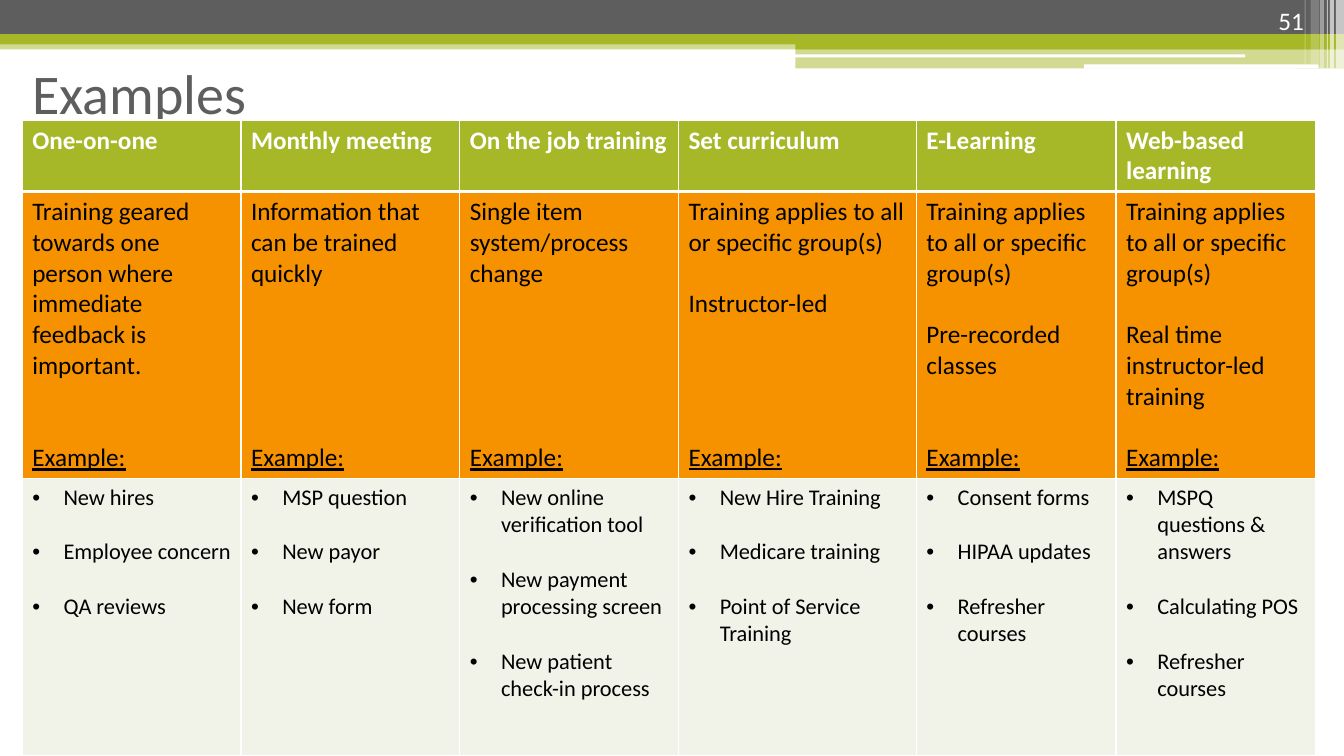
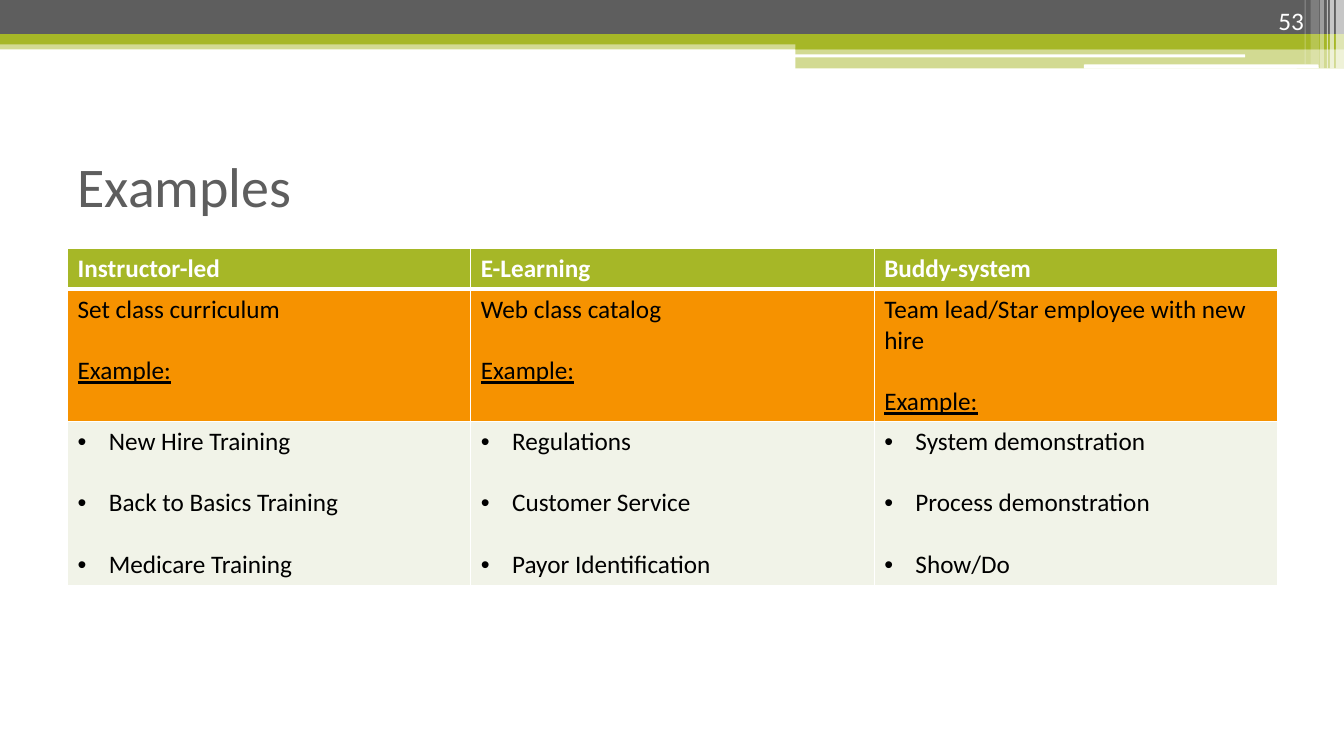
"""Build two slides of training examples, each with a banded header and a table."""
import pptx
import pptx.util
import pptx.dml.color
import pptx.enum.shapes
import pptx.enum.text
import pptx.oxml
import pptx.oxml.ns
from pptx.util import Inches

RGBColor = pptx.dml.color.RGBColor
WHITE = RGBColor(0xFF, 0xFF, 0xFF)
BLACK = RGBColor(0x00, 0x00, 0x00)
GRAY = RGBColor(0x5E, 0x5E, 0x5E)
GREEN = RGBColor(0xA6, 0xB7, 0x27)
ORANGE = RGBColor(0xF6, 0x92, 0x00)
PALE = RGBColor(0xF1, 0xF3, 0xE8)

FONT = "Calibri"
LINE_HEIGHT = 1.22
BULLET_INDENT = 0.31
WIDTH, HEIGHT = 13.33, 7.5
RECTANGLE = pptx.enum.shapes.MSO_SHAPE.RECTANGLE
ROUNDED = pptx.enum.shapes.MSO_SHAPE.ROUNDED_RECTANGLE
ANCHOR = pptx.enum.text.MSO_ANCHOR
ALIGN = pptx.enum.text.PP_ALIGN

BANDS = [
    (RECTANGLE, (0, 0.4, WIDTH, 0.09), GREEN, 50),
    (RECTANGLE, (0, 0, WIDTH, 0.34), GRAY, 100),
    (RECTANGLE, (0, 0.34, WIDTH, 0.1), GREEN, 100),
    (RECTANGLE, (7.89, 0.39, 5.44, 0.1), GREEN, 100),
    (RECTANGLE, (7.89, 0.48, 5.44, 0.2), GREEN, 50),
    (ROUNDED, (7.88, 0.54, 4.47, 0.03), WHITE, 100),
    (ROUNDED, (10.75, 0.64, 2.33, 0.04), WHITE, 100),
    (RECTANGLE, (13.25, 0, 0.08, 0.68), WHITE, 65),
    (RECTANGLE, (13.19, 0, 0.04, 0.68), WHITE, 65),
    (RECTANGLE, (13.16, 0, 0.01, 0.68), WHITE, 60),
    (RECTANGLE, (13.09, 0, 0.04, 0.68), WHITE, 40),
    (RECTANGLE, (13, 0, 0.08, 0.64), WHITE, 20),
    (RECTANGLE, (12.94, 0, 0.01, 0.64), WHITE, 30),
]

GROUPS = "Training applies to all or specific group(s)"

# Each column: heading, (description, blank lines above it) pairs, blank lines above "Example:", bullets.
METHODS = [
    ("One-on-one",
     [("Training geared towards one person where immediate feedback is important.", 0)], 2,
     ["New hires", "Employee concern", "QA reviews"]),
    ("Monthly meeting", [("Information that can be trained quickly", 0)], 5,
     ["MSP question", "New payor", "New form"]),
    ("On the job training", [("Single item system/process change", 0)], 5,
     ["New online verification tool", "New payment processing screen",
      "New patient check-in process"]),
    ("Set curriculum", [(GROUPS, 0), ("Instructor-led", 1)], 4,
     ["New Hire Training", "Medicare training", "Point of Service Training"]),
    ("E-Learning", [(GROUPS, 0), ("Pre-recorded classes", 1)], 2,
     ["Consent forms", "HIPAA updates", "Refresher courses"]),
    ("Web-based learning", [(GROUPS, 0), ("Real time instructor-led training", 1)], 1,
     ["MSPQ questions & answers", "Calculating POS", "Refresher courses"]),
]
FORMATS = [
    ("Instructor-led", [("Set class curriculum", 0)], 1,
     ["New Hire Training", "Back to Basics Training", "Medicare Training"]),
    ("E-Learning", [("Web class catalog", 0)], 1,
     ["Regulations", "Customer Service", "Payor Identification"]),
    ("Buddy-system", [("Team lead/Star employee with new hire", 0)], 1,
     ["System demonstration", "Process demonstration", "Show/Do"]),
]


def add_run(paragraph, text, size, color, bold=False, underline=False):
    run = paragraph.add_run()
    run.text = text
    run.font.name = FONT
    run.font.size = pptx.util.Pt(size)
    run.font.color.rgb = color
    run.font.bold = bold
    run.font.underline = underline


def add_text(slide, box, text, size, color, anchor, alignment=ALIGN.LEFT):
    frame = slide.shapes.add_textbox(*map(Inches, box)).text_frame
    frame.word_wrap = True
    frame.vertical_anchor = anchor
    frame.paragraphs[0].alignment = alignment
    add_run(frame.paragraphs[0], text, size, color)


def add_band(slide, kind, box, color, opacity):
    shape = slide.shapes.add_shape(kind, *map(Inches, box))
    shape.shadow.inherit = False
    shape.fill.solid()
    shape.fill.fore_color.rgb = color
    shape.line.fill.background()
    if opacity < 100:
        fill_color = shape.element.spPr.find(".//" + pptx.oxml.ns.qn("a:srgbClr"))
        alpha = pptx.oxml.parse_xml(
            f'<a:alpha {pptx.oxml.ns.nsdecls("a")} val="{opacity * 1000}"/>')
        fill_color.append(alpha)


def add_titled_slide(presentation, number, title_box):
    slide = presentation.slides.add_slide(presentation.slide_layouts[6])
    for band in BANDS:
        add_band(slide, *band)
    add_text(slide, (11.92, 0, 1.11, 0.4), number, 18, WHITE, ANCHOR.BOTTOM, ALIGN.RIGHT)
    add_text(slide, title_box, "Examples", 40, GRAY, ANCHOR.MIDDLE)
    return slide


def style_cell(cell, color, top=1, bottom=1):
    properties = cell._tc.get_or_add_tcPr()
    for side, width in (("L", 1), ("R", 1), ("T", top), ("B", bottom)):
        properties.append(pptx.oxml.parse_xml(
            f'<a:ln{side} {pptx.oxml.ns.nsdecls("a")} w="{pptx.util.Pt(width)}">'
            f'<a:solidFill><a:srgbClr val="{WHITE}"/></a:solidFill></a:ln{side}>'))
    cell.fill.solid()
    cell.fill.fore_color.rgb = color


def next_paragraph(cell, size, blank_lines):
    frame = cell.text_frame
    paragraph = frame.paragraphs[0] if not frame.text else frame.add_paragraph()
    paragraph.space_before = pptx.util.Pt(round(blank_lines * size * LINE_HEIGHT, 1))
    return paragraph


def add_bullet(cell, text, size, blank_lines):
    paragraph = next_paragraph(cell, size, blank_lines)
    properties = paragraph._p.get_or_add_pPr()
    properties.set("marL", str(Inches(BULLET_INDENT)))
    properties.set("indent", str(-Inches(BULLET_INDENT)))
    for bullet in ('buFont {} typeface="Arial"', 'buChar {} char="•"'):
        declaration = bullet.format(pptx.oxml.ns.nsdecls("a"))
        properties.append(pptx.oxml.parse_xml(f"<a:{declaration}/>"))
    add_run(paragraph, text, size, BLACK)


def fill_column(table, index, column, bullet_size):
    heading, descriptions, example_gap, bullets = column
    head, body, examples = (table.cell(row, index) for row in range(3))
    style_cell(head, GREEN, bottom=3)
    style_cell(body, ORANGE, top=3)
    style_cell(examples, PALE)
    add_run(next_paragraph(head, 18, 0), heading, 18, WHITE, bold=True)
    for text, gap in descriptions:
        add_run(next_paragraph(body, 18, gap), text, 18, BLACK)
    add_run(next_paragraph(body, 18, example_gap), "Example:", 18, BLACK, underline=True)
    for position, text in enumerate(bullets):
        add_bullet(examples, text, bullet_size, min(position, 1))


def add_example_table(slide, left, top, widths, heights, columns, bullet_size):
    box = (left, top, sum(widths), sum(heights))
    table = slide.shapes.add_table(len(heights), len(widths), *map(Inches, box)).table
    table.first_row = False
    table.horz_banding = False
    for row, height in zip(table.rows, heights):
        row.height = Inches(height)
    for index, (width, column) in enumerate(zip(widths, columns)):
        table.columns[index].width = Inches(width)
        fill_column(table, index, column, bullet_size)


def main():
    presentation = pptx.Presentation()
    presentation.slide_width = Inches(WIDTH)
    presentation.slide_height = Inches(HEIGHT)

    slide = add_titled_slide(presentation, "51", (0.22, 0.44, 12, 0.95))
    add_example_table(slide, 0.22, 1.19, [2.17, 2.17, 2.17, 2.36, 1.98, 1.98],
                      [0.71, 2.85, 2.75], METHODS, 16)

    slide = add_titled_slide(presentation, "53", (0.67, 1.25, 12, 1.17))
    add_example_table(slide, 0.67, 2.46, [4, 4, 4], [0.41, 1.31, 1.63], FORMATS, 18)

    presentation.save("out.pptx")


if __name__ == "__main__":
    main()
